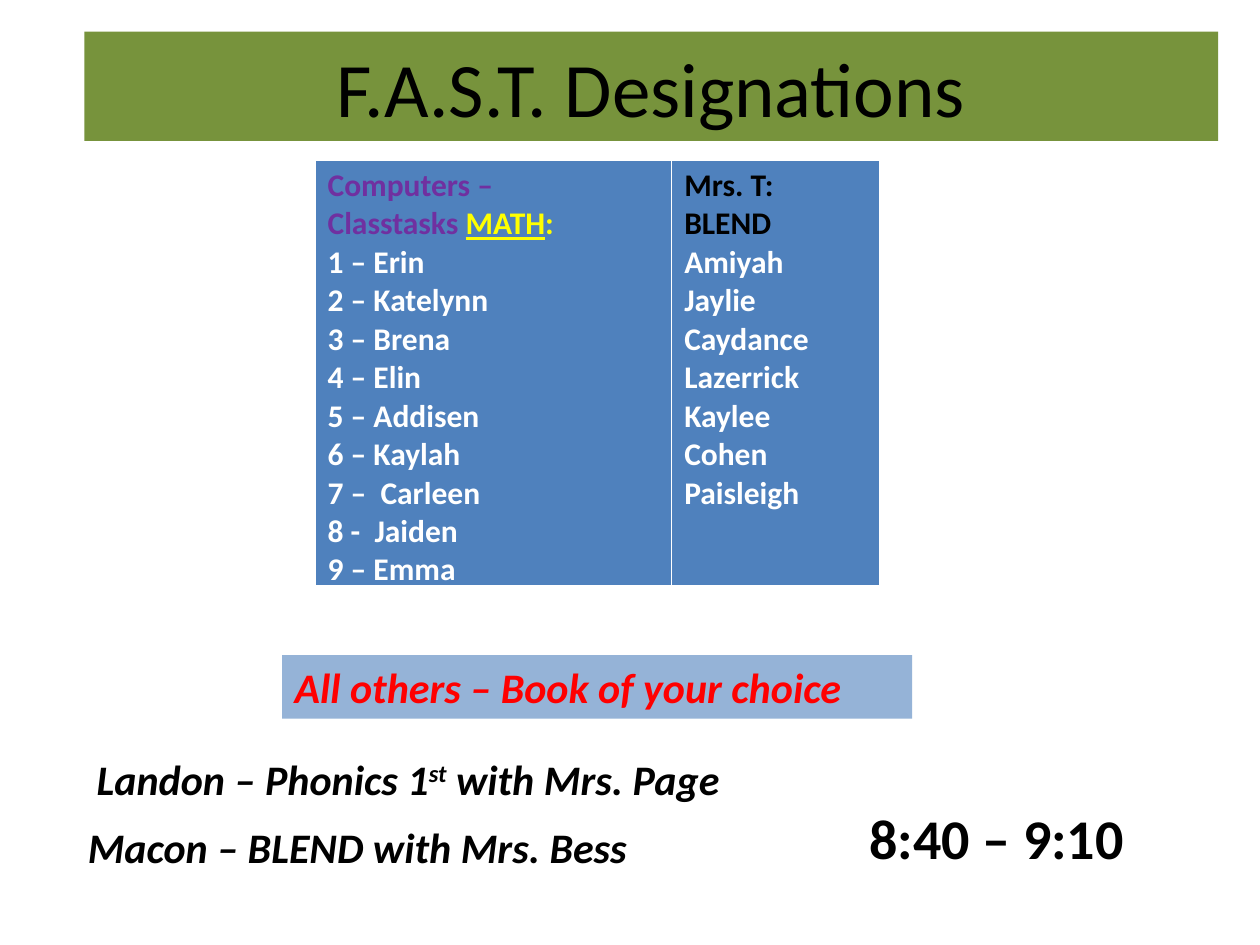
from dataclasses import dataclass
from typing import Optional

from lxml.etree import SubElement
from pptx import Presentation
from pptx.dml.color import RGBColor
from pptx.enum.text import MSO_ANCHOR as Anchor, MSO_AUTO_SIZE as Fit, PP_ALIGN as Align
from pptx.oxml.ns import qn
from pptx.util import Cm, Pt

BLACK = RGBColor(0x00, 0x00, 0x00)
WHITE = RGBColor(0xFF, 0xFF, 0xFF)
GREEN = RGBColor(0x77, 0x93, 0x3C)
BLUE = RGBColor(0x4F, 0x81, 0xBD)
PALE = RGBColor(0x95, 0xB3, 0xD7)
RED = RGBColor(0xFF, 0x00, 0x00)
PURPLE = RGBColor(0x70, 0x30, 0xA0)
YELLOW = RGBColor(0xFF, 0xFF, 0x00)
FONT = "Calibri"


@dataclass
class Bit:
    text: str
    color: RGBColor = BLACK
    line: bool = False
    raised: bool = False


@dataclass
class Box:
    left: float
    top: float
    width: float
    height: float
    bits: list[Bit]
    size: int = 24
    bold: bool = True
    italic: bool = True
    align: Align = Align.LEFT
    anchor: Anchor = Anchor.TOP
    fill: Optional[RGBColor] = None
    fit: Fit = Fit.SHAPE_TO_FIT_TEXT


def write(para, bits: list[Bit], size: int, bold: bool, italic: bool) -> None:
    font = para.font
    font.name, font.size = FONT, Pt(size)
    font.bold, font.italic = bold, italic
    for bit in bits:
        run = para.add_run()
        run.text = bit.text
        run.font.color.rgb = bit.color
        if bit.line:
            run.font.underline = True
        if bit.raised:
            run._r.get_or_add_rPr().set("baseline", "30000")


def draw_box(slide, box: Box) -> None:
    shape = slide.shapes.add_textbox(
        Cm(box.left), Cm(box.top), Cm(box.width), Cm(box.height))
    if box.fill is not None:
        shape.fill.solid()
        shape.fill.fore_color.rgb = box.fill
    frame = shape.text_frame
    frame.word_wrap = True
    frame.auto_size = box.fit
    frame.vertical_anchor = box.anchor
    para = frame.paragraphs[0]
    para.alignment = box.align
    write(para, box.bits, box.size, box.bold, box.italic)


def edge(cell, side: str, width: float) -> None:
    line = SubElement(cell._tc.get_or_add_tcPr(), qn(f"a:{side}"), w=str(Pt(width)))
    fill = SubElement(line, qn("a:solidFill"))
    SubElement(fill, qn("a:srgbClr"), val=str(WHITE))


def draw_cell(cell, rows: list[list[Bit]]) -> None:
    # Borders come before the fill in the cell properties
    for side, width in (("lnL", 1), ("lnR", 1), ("lnT", 1), ("lnB", 3)):
        edge(cell, side, width)
    cell.fill.solid()
    cell.fill.fore_color.rgb = BLUE
    cell.margin_bottom = 0
    frame = cell.text_frame
    for i, bits in enumerate(rows):
        para = frame.add_paragraph() if i else frame.paragraphs[0]
        write(para, bits, 18, True, False)


def names(*items: str) -> list[list[Bit]]:
    return [[Bit(item, WHITE)] for item in items]


BOXES = [
    Box(1.7, 0.64, 22.86, 2.2, [Bit("F.A.S.T. Designations")], size=44,
        bold=False, italic=False, align=Align.CENTER, anchor=Anchor.MIDDLE,
        fill=GREEN, fit=Fit.NONE),
    Box(16.51, 16.08, 7.42, 1.62, [Bit("8:40 – 9:10 ")], size=32,
        italic=False, align=Align.CENTER),
    Box(1.7, 15.06, 23.06, 1.28,
        [Bit("Landon – Phonics 1"), Bit("st", raised=True),
         Bit(" with Mrs. Page")]),
    Box(1.52, 16.43, 12.27, 1.28, [Bit("Macon – BLEND with Mrs. Bess")]),
    Box(5.69, 13.21, 12.7, 1.28, [Bit("All others – Book of your choice", RED)],
        fill=PALE),
]

MATH = [
    [Bit("Computers –", PURPLE)],
    [Bit("Classtasks ", PURPLE), Bit("MATH", YELLOW, line=True), Bit(":", YELLOW)],
    *names("1 – Erin", "2 – Katelynn", "3 – Brena", "4 – Elin", "5 – Addisen",
           "6 – Kaylah", "7 –  Carleen", "8 -  Jaiden", "9 – Emma"),
]
READING = [
    [Bit("Mrs. T:")],
    [Bit("BLEND")],
    *names("Amiyah", "Jaylie", "Caydance", "Lazerrick", "Kaylee", "Cohen",
           "Paisleigh"),
]
COLS = [(7.19, MATH), (4.19, READING)]


def main() -> None:
    deck = Presentation()
    deck.slide_width, deck.slide_height = Cm(25.4), Cm(19.05)
    slide = deck.slides.add_slide(deck.slide_layouts[6])

    # Title, notes and time
    for box in BOXES:
        draw_box(slide, box)

    # Group lists
    width = sum(col for col, _ in COLS)
    table = slide.shapes.add_table(
        1, len(COLS), Cm(6.35), Cm(3.23), Cm(width), Cm(8.6)).table
    table.first_row = table.horz_banding = False
    for i, (col, rows) in enumerate(COLS):
        table.columns[i].width = Cm(col)
        draw_cell(table.cell(0, i), rows)

    deck.save("out.pptx")


if __name__ == "__main__":
    main()
